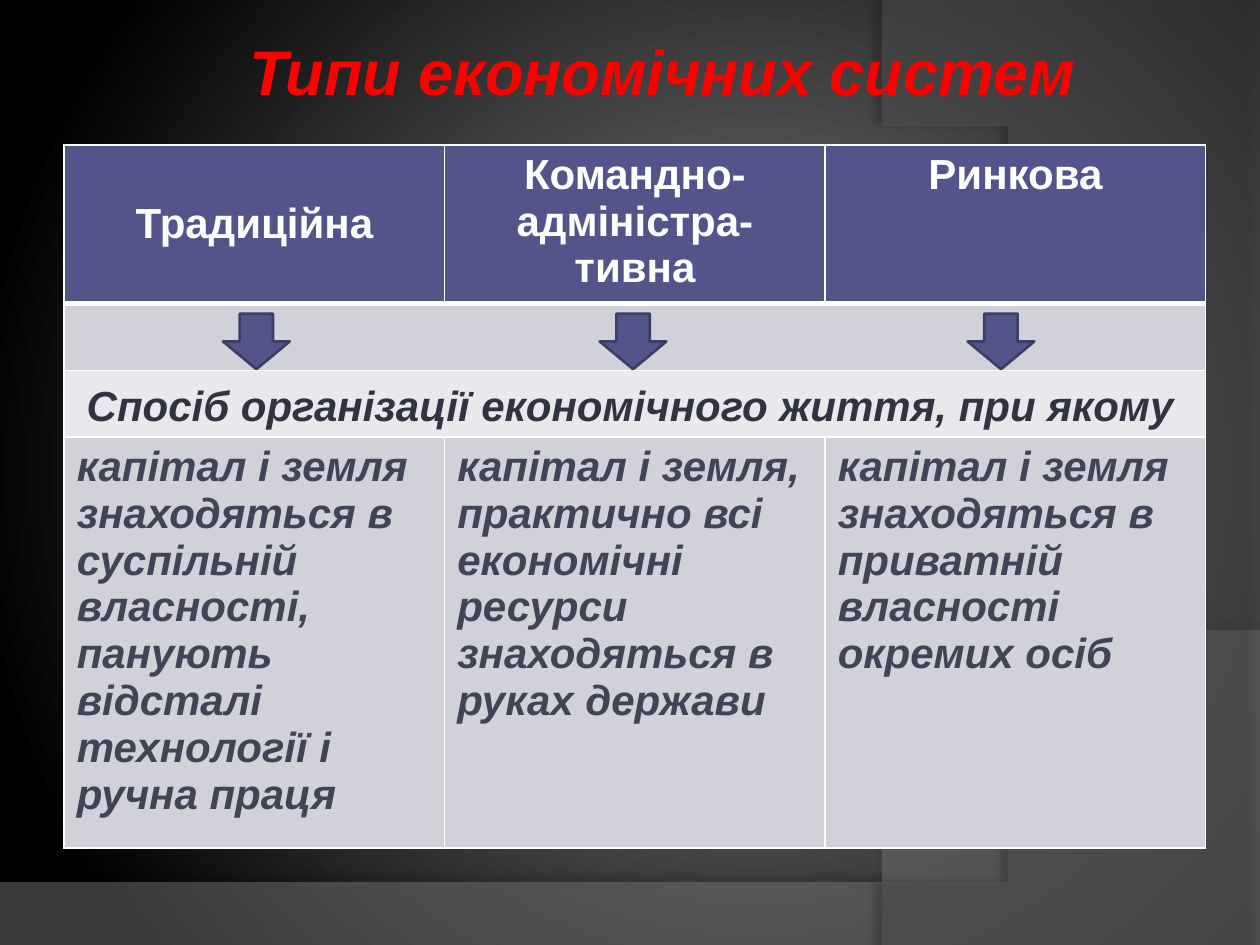
from dataclasses import dataclass

from lxml.etree import SubElement
from pptx import Presentation
from pptx.dml.color import RGBColor
from pptx.enum.shapes import MSO_SHAPE
from pptx.enum.text import MSO_ANCHOR, MSO_AUTO_SIZE, PP_ALIGN
from pptx.oxml import parse_xml
from pptx.oxml.ns import nsdecls, qn
from pptx.util import Inches, Pt


@dataclass(frozen=True)
class Theme:
    """Colours, font and sizes of the slide."""
    font: str = "Arial"
    title_size: int = 36
    text_size: int = 24
    glow: str = "848484"
    dark: str = "000000"
    lower_wave: str = "7F7F7F"
    right_wave: str = "5E5E5E"
    title: str = "FF0000"
    accent: str = "53548A"
    accent_line: str = "3D3E66"
    white: str = "FFFFFF"
    band: str = "D1D1DA"
    light_band: str = "E9E9ED"
    body: str = "424456"
    banner: str = "323341"


THEME = Theme()
SYSTEMS = [
    ("Традиційна",
     "капітал і земля знаходяться в суспільній власності, "
     "панують відсталі технології і ручна праця"),
    ("Командно-адміністра-тивна",
     "капітал і земля, практично всі економічні ресурси "
     "знаходяться в руках держави"),
    ("Ринкова",
     "капітал і земля знаходяться в приватній власності окремих осіб"),
]
ROW_HEIGHTS = [1.26, 0.53, 0.53, 3.26]
ARROW_LEFTS = [1.77, 4.76, 7.68]


def rgb(value):
    """Turn a hex string into a colour."""
    return RGBColor.from_string(value)


def write(frame, text, size, color, italic=True, align=None):
    """Write one bold run into the first paragraph of a frame."""
    paragraph = frame.paragraphs[0]
    paragraph.alignment = align
    run = paragraph.add_run()
    run.text = text
    font = run.font
    font.name, font.size, font.color.rgb = THEME.font, Pt(size), rgb(color)
    font.bold, font.italic = True, italic


def curve(start, control1, control2, end, steps=40):
    """List the points of a cubic curve after its start."""
    points = []
    for step in range(1, steps + 1):
        t = step / steps
        weights = ((1 - t) ** 3, 3 * t * (1 - t) ** 2, 3 * t * t * (1 - t), t ** 3)
        corners = zip(start, control1, control2, end)
        points.append(tuple(sum(w * c for w, c in zip(weights, axis))
                            for axis in corners))
    return points


def add_wave(slide, points, color, opacity, shadow_opacity, distance, angle):
    """Draw one translucent backdrop wave with a soft shadow."""
    builder = slide.shapes.build_freeform(*points[0], scale=Inches(1))
    builder.add_line_segments(points[1:], close=True)
    wave = builder.convert_to_shape()
    wave.fill.solid()
    wave.fill.fore_color.rgb = rgb(color)
    wave.line.fill.background()
    tint = wave.element.spPr.find(f"{qn('a:solidFill')}/{qn('a:srgbClr')}")
    SubElement(tint, qn("a:alpha"), val=str(opacity * 1000))
    wave.shadow.inherit = False
    effects = wave.element.spPr.find(qn("a:effectLst"))
    shadow = SubElement(effects, qn("a:outerShdw"), blurRad=str(Pt(4)),
                        dist=str(Pt(distance)), dir=str(angle * 60000))
    shade = SubElement(shadow, qn("a:srgbClr"), val=THEME.dark)
    SubElement(shade, qn("a:alpha"), val=str(shadow_opacity * 1000))


def add_backdrop(slide):
    """Paint the radial background and its two waves."""
    fill = slide.background.fill
    fill.gradient()
    for stop, color in zip(fill.gradient_stops, (THEME.glow, THEME.dark)):
        stop.color.rgb = rgb(color)
    gradient = slide.element.find(f".//{qn('a:gradFill')}")
    gradient.replace(gradient.find(qn("a:lin")), parse_xml(
        f'<a:path {nsdecls("a")} path="circle">'
        '<a:fillToRect l="60000" t="50000" r="40000" b="50000"/></a:path>'))
    lower = [(0, 7.05), (0, 7.5), (10, 7.5), (10, 5.2)]
    lower += curve((10, 5.2), (5.59, 7.29), (3.91, 7.19), (0, 7.05))
    add_wave(slide, lower, THEME.lower_wave, 45, 35, 3.5, 270)
    right = [(10, 0.02), (10, 7.5), (7.03, 7.5)]
    right += curve((7.03, 7.5), (8.91, 6.19), (9.47, 2.75), (6.68, 0))
    add_wave(slide, right, THEME.right_wave, 40, 45, 4, 180)


def add_title(slide, left, top, width, height):
    """Place the title in front of the backdrop."""
    title = slide.shapes.title
    title.left, title.top, title.width, title.height = left, top, width, height
    frame = title.text_frame
    frame.auto_size = MSO_AUTO_SIZE.NONE
    frame.word_wrap = False
    frame.vertical_anchor = MSO_ANCHOR.TOP
    write(frame, "Типи економічних систем", THEME.title_size, THEME.title,
          align=PP_ALIGN.CENTER)
    slide.shapes.element.append(title.element)


def style_cell(cell, color, bottom=1):
    """Give a cell white borders and a solid fill."""
    properties = cell._tc.get_or_add_tcPr()
    for side, width in (("L", 1), ("R", 1), ("T", 1), ("B", bottom)):
        border = SubElement(properties, qn(f"a:ln{side}"), w=str(Pt(width)))
        paint = SubElement(border, qn("a:solidFill"))
        SubElement(paint, qn("a:srgbClr"), val=THEME.white)
    cell.fill.solid()
    cell.fill.fore_color.rgb = rgb(color)


def add_systems_table(slide, left, top, width, height):
    """Build the comparison table of the three systems."""
    table = slide.shapes.add_table(
        len(ROW_HEIGHTS), len(SYSTEMS), left, top, width, height).table
    for row, row_height in zip(table.rows, ROW_HEIGHTS):
        row.height = Inches(row_height)
    for column, (name, description) in enumerate(SYSTEMS):
        header, *bands, body = [table.cell(r, column) for r in range(4)]
        style_cell(header, THEME.accent, bottom=3)
        write(header.text_frame, name, THEME.text_size, THEME.white,
              italic=False, align=PP_ALIGN.CENTER)
        for band, color in zip(bands, (THEME.band, THEME.light_band)):
            style_cell(band, color)
        style_cell(body, THEME.band)
        write(body.text_frame, description, THEME.text_size, THEME.body)
    table.cell(0, 0).vertical_anchor = MSO_ANCHOR.MIDDLE
    for row in (1, 2):
        table.cell(row, 0).merge(table.cell(row, len(SYSTEMS) - 1))


def add_arrow(slide, left, top, width, height):
    """Draw a down arrow below a column heading."""
    arrow = slide.shapes.add_shape(MSO_SHAPE.DOWN_ARROW, left, top, width, height)
    arrow.shadow.inherit = False
    arrow.fill.solid()
    arrow.fill.fore_color.rgb = rgb(THEME.accent)
    arrow.line.color.rgb = rgb(THEME.accent_line)
    arrow.line.width = Pt(1.5)


def add_banner(slide, left, top, width, height):
    """Write the statement shared by all columns."""
    frame = slide.shapes.add_textbox(left, top, width, height).text_frame
    frame.word_wrap = False
    write(frame, "Спосіб організації економічного життя, при якому",
          THEME.text_size, THEME.banner)


def main():
    """Build and save the slide."""
    deck = Presentation()
    deck.slide_width, deck.slide_height = Inches(10), Inches(7.5)
    slide = deck.slides.add_slide(deck.slide_layouts.get_by_name("Title Only"))
    add_backdrop(slide)
    add_title(slide, Inches(1.85), Inches(0.21), Inches(6.82), Inches(0.71))
    add_systems_table(slide, Inches(0.51), Inches(1.15), Inches(9.06),
                      Inches(sum(ROW_HEIGHTS)))
    for left in ARROW_LEFTS:
        add_arrow(slide, Inches(left), Inches(2.49), Inches(0.53), Inches(0.44))
    add_banner(slide, Inches(0.59), Inches(2.96), Inches(8.9), Inches(0.51))
    deck.save("out.pptx")


if __name__ == "__main__":
    main()
